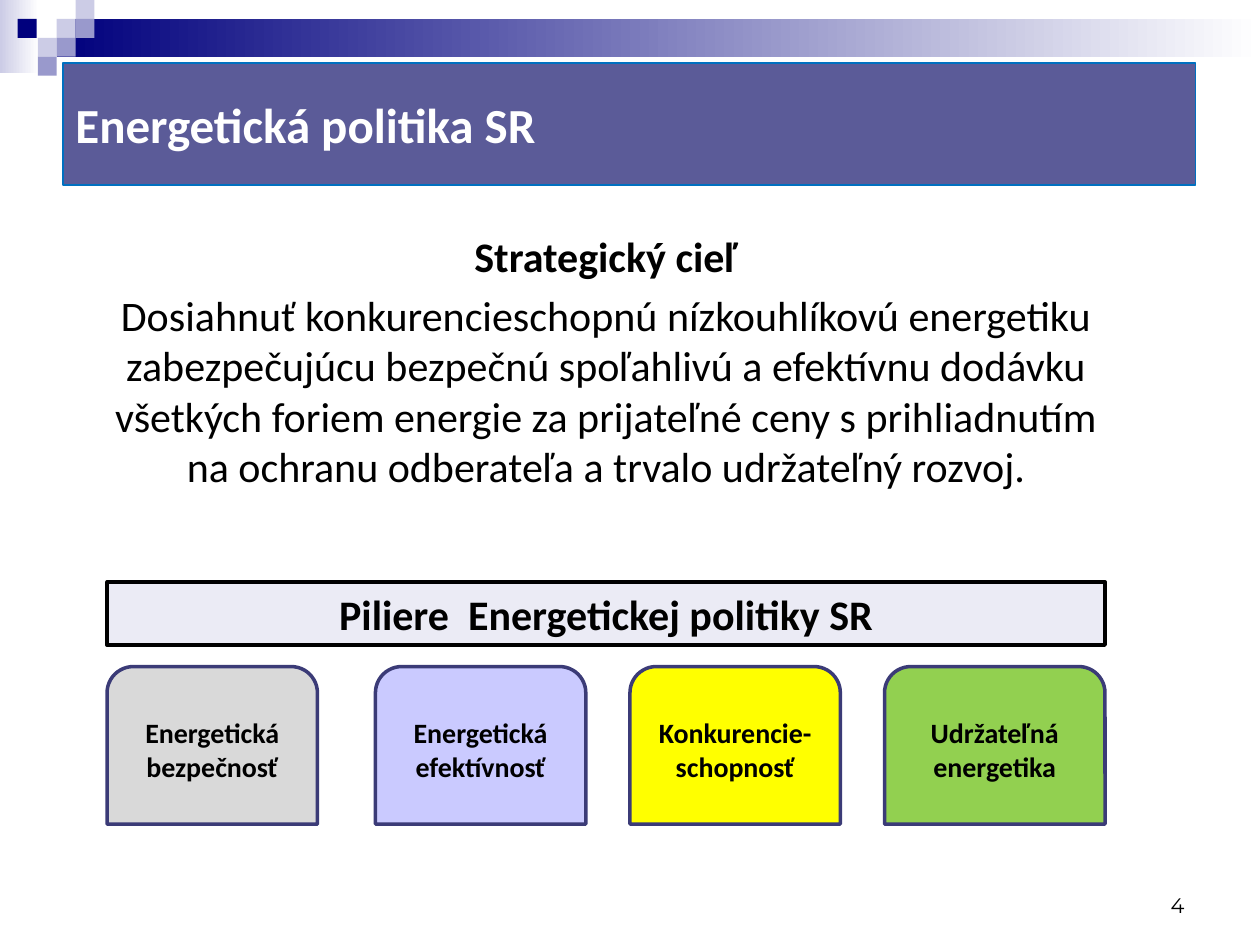
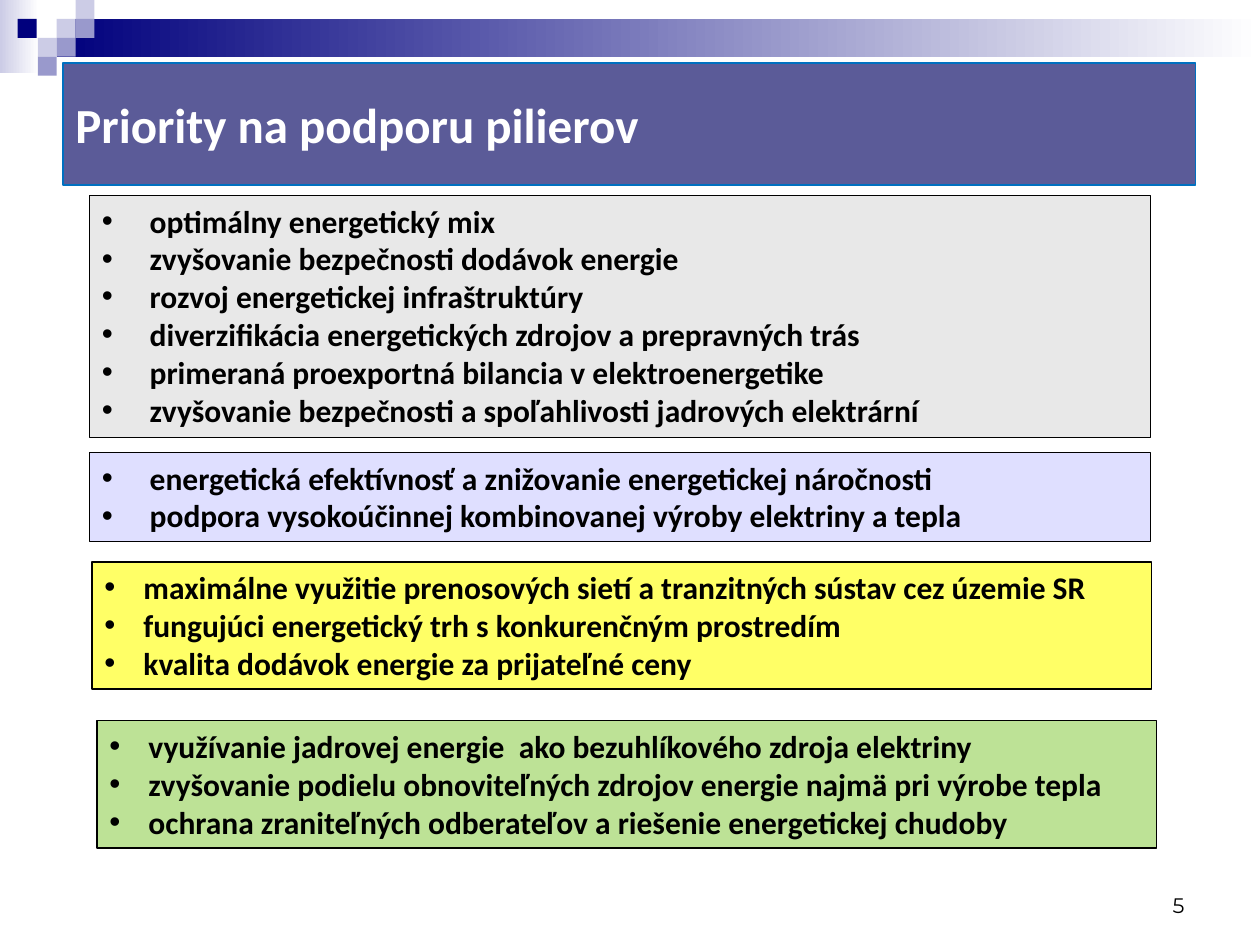
from dataclasses import dataclass

from lxml import etree
from pptx import Presentation
from pptx import util as u
from pptx.dml.color import RGBColor
from pptx.enum import shapes, text
from pptx.oxml.ns import qn

NAVY, LILAC, PALE_LILAC = "00007D", "9999CC", "CCCCE6"
TITLE_BLUE, TITLE_EDGE, PILLAR_EDGE = "5B5B98", "0070C0", "3B3B77"
GREY, LAVENDER, YELLOW, GREEN = "D9D9D9", "CACAFF", "FFFF00", "92D050"
BLACK, WHITE, HEADER_TINT = "000000", "FFFFFF", "EBEBF5"
BODY_FONT, NUMBER_FONT = "Calibri", "Montserrat"
RECT = shapes.MSO_SHAPE.RECTANGLE
PILLAR_SHAPE = shapes.MSO_SHAPE.ROUND_2_SAME_RECTANGLE
LEFT, CENTER, RIGHT = text.PP_ALIGN.LEFT, text.PP_ALIGN.CENTER, text.PP_ALIGN.RIGHT
TOP, MIDDLE, BOTTOM = (text.MSO_ANCHOR.TOP, text.MSO_ANCHOR.MIDDLE,
                       text.MSO_ANCHOR.BOTTOM)


@dataclass(frozen=True)
class Box:
    left: float
    top: float
    width: float
    height: float

    def lengths(self) -> list[u.Length]:
        return [u.Inches(n) for n in (self.left, self.top, self.width, self.height)]


@dataclass(frozen=True)
class Pillar:
    label: str
    left: float
    width: float
    color: str


@dataclass(frozen=True)
class PriorityGroup:
    box: Box
    color: str
    indent: float
    priorities: tuple[str, ...]


@dataclass(frozen=True)
class Style:
    size: float
    bold: bool = True
    align: text.PP_ALIGN = LEFT
    color: str = BLACK
    font: str = BODY_FONT


TITLE = Style(28, color=WHITE)
HEADING = Style(24, align=CENTER)
BODY = Style(24, bold=False, align=CENTER)
PILLAR = Style(16, align=CENTER)
PRIORITY = Style(18)
NUMBER = Style(12, bold=False, align=RIGHT, font=NUMBER_FONT)

# Corner mosaic: left, top and colour of each small square
TILE = 0.15
TILES = (
    (0.45, 0.15, PALE_LILAC), (0.6, 0, PALE_LILAC), (0.6, 0.15, LILAC),
    (0.3, 0.3, PALE_LILAC), (0.14, 0.15, NAVY), (0.45, 0.3, LILAC),
    (0.3, 0.45, LILAC),
)

PILLARS = (
    Pillar("Energetická bezpečnosť", 0.85, 1.67, GREY),
    Pillar("Energetická efektívnosť", 2.98, 1.67, LAVENDER),
    Pillar("Konkurencie-schopnosť", 5, 1.67, YELLOW),
    Pillar("Udržateľná energetika", 7.02, 1.75, GREEN),
)

PRIORITY_GROUPS = (
    PriorityGroup(Box(0.71, 1.55, 8.42, 1.92), GREY, 0.38, (
        "optimálny energetický mix",
        "zvyšovanie bezpečnosti dodávok energie",
        "rozvoj energetickej infraštruktúry",
        "diverzifikácia energetických zdrojov a prepravných trás",
        "primeraná proexportná bilancia v elektroenergetike",
        "zvyšovanie bezpečnosti a spoľahlivosti jadrových elektrární",
    )),
    PriorityGroup(Box(0.71, 3.59, 8.42, 0.71), LAVENDER, 0.38, (
        "energetická efektívnosť a znižovanie energetickej náročnosti",
        "podpora vysokoúčinnej kombinovanej výroby elektriny a tepla",
    )),
    PriorityGroup(Box(0.73, 4.46, 8.41, 1.01), YELLOW, 0.31, (
        "maximálne využitie prenosových sietí a tranzitných sústav cez územie SR",
        "fungujúci energetický trh s konkurenčným prostredím",
        "kvalita dodávok energie za prijateľné ceny",
    )),
    PriorityGroup(Box(0.77, 5.72, 8.41, 1.01), GREEN, 0.31, (
        "využívanie jadrovej energie  ako bezuhlíkového zdroja elektriny",
        "zvyšovanie podielu obnoviteľných zdrojov energie najmä pri výrobe tepla",
        "ochrana zraniteľných odberateľov a riešenie energetickej chudoby",
    )),
)


def rgb(color: str) -> RGBColor:
    return RGBColor.from_string(color)


def add_panel(slide, box: Box, fill: str, edge: str = "", edge_width: float = 0.75,
              kind=RECT):
    panel = slide.shapes.add_shape(kind, *box.lengths())
    panel.shadow.inherit = False
    panel.fill.solid()
    panel.fill.fore_color.rgb = rgb(fill)
    if edge:
        panel.line.color.rgb = rgb(edge)
        panel.line.width = u.Pt(edge_width)
    else:
        panel.line.fill.background()
    return panel


def add_fade(slide, box: Box, start: str) -> None:
    """Band fading to white from left to right."""
    fill = add_panel(slide, box, start).fill
    fill.gradient()
    fill.gradient_angle = 0
    for stop, color in zip(fill.gradient_stops, (start, WHITE)):
        stop.color.rgb = rgb(color)


def set_opacity(panel, percent: int) -> None:
    color = panel.fill._xPr.find(".//" + qn("a:srgbClr"))
    etree.SubElement(color, qn("a:alpha"), val=str(percent * 1000))


def add_bullet(paragraph, indent: float) -> None:
    props = paragraph._p.get_or_add_pPr()
    props.set("marL", str(u.Inches(indent)))
    props.set("indent", str(-u.Inches(indent)))
    etree.SubElement(props, qn("a:buFont"), typeface="Arial")
    etree.SubElement(props, qn("a:buChar"), char="•")


def write(holder, lines: list[tuple[str, Style]], anchor=MIDDLE,
          indent: float = 0, space_before: float = 0) -> None:
    frame = holder.text_frame
    frame.word_wrap = True
    frame.vertical_anchor = anchor
    for index, (line, style) in enumerate(lines):
        paragraph = frame.add_paragraph() if index else frame.paragraphs[0]
        paragraph.text = line
        paragraph.alignment = style.align
        if index and space_before:
            paragraph.space_before = u.Pt(space_before)
        if indent:
            add_bullet(paragraph, indent)
        font = paragraph.font
        font.name, font.size, font.bold = style.font, u.Pt(style.size), style.bold
        font.color.rgb = rgb(style.color)


def add_base_slide(deck, title: str, number: int):
    slide = deck.slides.add_slide(deck.slide_layouts[6])
    # Top bands and corner mosaic
    add_fade(slide, Box(0, 0, 0.31, 0.58), PALE_LILAC)
    add_fade(slide, Box(0.45, 0.15, 9.55, 0.3), NAVY)
    for left, top, color in TILES:
        add_panel(slide, Box(left, top, TILE, TILE), color)
    # Title bar and slide number
    title_bar = add_panel(slide, Box(0.5, 0.5, 8.99, 0.97), TITLE_BLUE, TITLE_EDGE)
    write(title_bar, [(title, TITLE)])
    footer = slide.shapes.add_textbox(*Box(7.17, 6.83, 2.33, 0.5).lengths())
    write(footer, [(str(number), NUMBER)], BOTTOM)
    return slide


def build_policy_slide(deck) -> None:
    slide = add_base_slide(deck, "Energetická politika SR", 4)
    # Strategic goal
    goal = slide.shapes.add_textbox(*Box(0.31, 1.78, 9, 2.5).lengths())
    write(goal, [
        ("Strategický cieľ", HEADING),
        ("Dosiahnuť konkurencieschopnú nízkouhlíkovú energetiku zabezpečujúcu "
         "bezpečnú spoľahlivú a efektívnu dodávku všetkých foriem energie za "
         "prijateľné ceny s prihliadnutím\vna ochranu odberateľa a trvalo "
         "udržateľný rozvoj.", BODY),
    ], TOP, space_before=4.8)
    # Pillars under their header
    header = add_panel(slide, Box(0.85, 4.62, 7.92, 0.5), HEADER_TINT, BLACK, 2)
    write(header, [("Piliere  Energetickej politiky SR", HEADING)])
    for pillar in PILLARS:
        block = add_panel(slide, Box(pillar.left, 5.29, pillar.width, 1.25),
                          pillar.color, PILLAR_EDGE, 2, PILLAR_SHAPE)
        write(block, [(pillar.label, PILLAR)])


def build_priorities_slide(deck) -> None:
    slide = add_base_slide(deck, "Priority na podporu pilierov", 5)
    for group in PRIORITY_GROUPS:
        panel = add_panel(slide, group.box, group.color, BLACK)
        set_opacity(panel, 60)
        write(panel, [(priority, PRIORITY) for priority in group.priorities],
              TOP, indent=group.indent)


def main() -> None:
    deck = Presentation()
    deck.slide_width, deck.slide_height = u.Inches(10), u.Inches(7.5)
    build_policy_slide(deck)
    build_priorities_slide(deck)
    deck.save("out.pptx")


if __name__ == "__main__":
    main()
